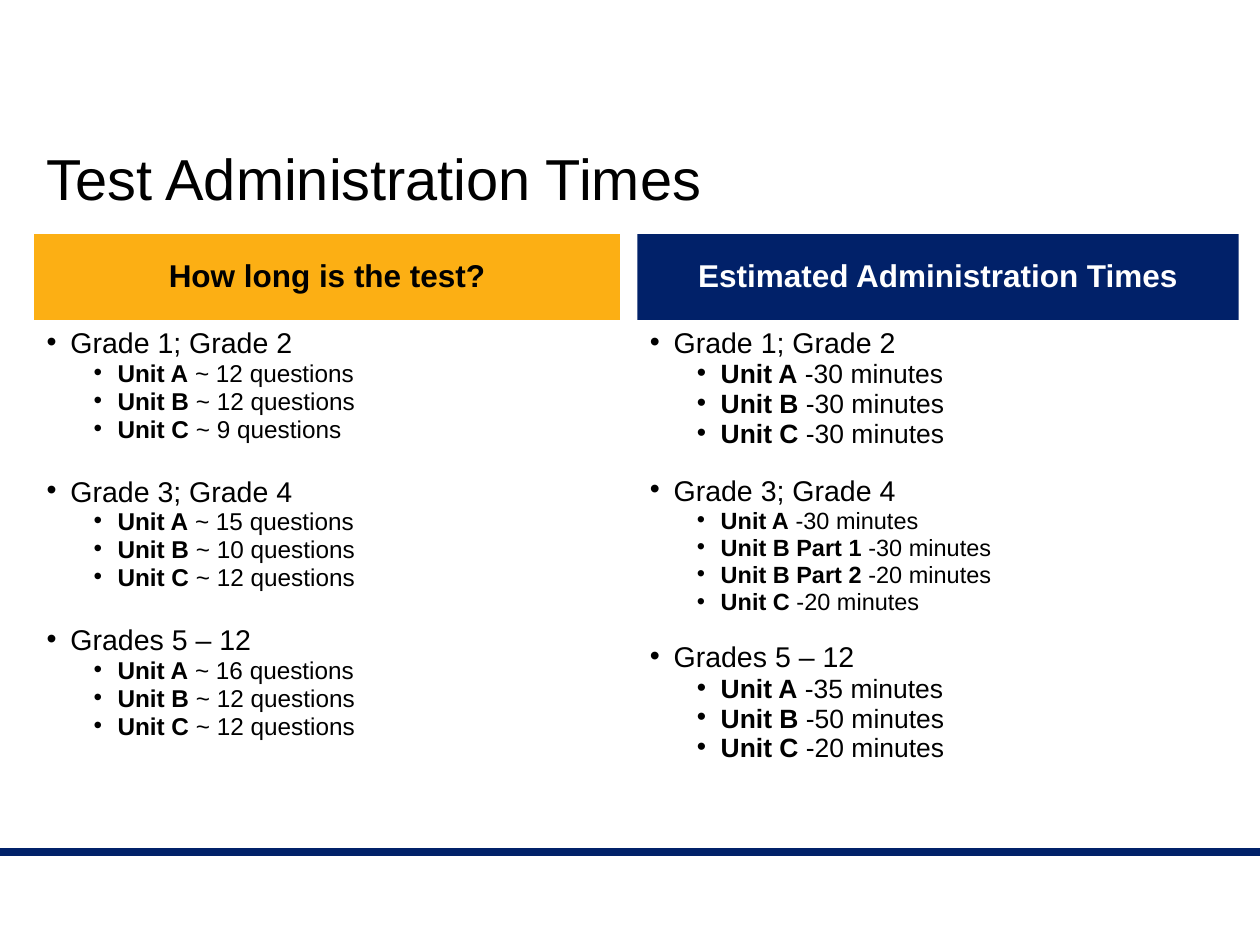
"""Build the slide on test lengths and estimated administration times."""
from lxml.etree import SubElement
from pptx import Presentation
from pptx.dml.color import RGBColor
from pptx.enum.shapes import MSO_CONNECTOR as CONN, MSO_SHAPE as SHAPE
from pptx.enum.text import MSO_ANCHOR as ANCHOR, MSO_AUTO_SIZE as AUTO, PP_ALIGN as ALIGN
from pptx.oxml.ns import qn
from pptx.util import Cm, Pt

NAVY, GOLD, BLACK, WHITE = "012169", "FCAF14", "000000", "FFFFFF"


def style(r, size, color=BLACK, bold=False):
    r.font.name, r.font.size, r.font.bold = "Arial", Pt(size), bold
    r.font.color.rgb = RGBColor.from_string(color)


def add_bullet(p, margin):
    pPr = p._p.get_or_add_pPr()
    pPr.set("marL", str(Cm(margin)))
    pPr.set("indent", str(-Cm(0.48)))
    SubElement(pPr, qn("a:buFont"), typeface="Arial")
    SubElement(pPr, qn("a:buChar"), char="•")


columns = [
    (0.69, 11.81, "How long is the test?", GOLD, BLACK, 8.46, 22.7, [
        ("Grade 1; Grade 2", 13.9, [
            ("Unit A", " ~ 12 questions"), ("Unit B", " ~ 12 questions"), ("Unit C", " ~ 9 questions")]),
        ("Grade 3; Grade 4", 13.9, [
            ("Unit A", " ~ 15 questions"), ("Unit B", " ~ 10 questions"), ("Unit C", " ~ 12 questions")]),
        ("Grades 5 – 12", 13.9, [
            ("Unit A", " ~ 16 questions"), ("Unit B", " ~ 12 questions"), ("Unit C", " ~ 12 questions")]),
    ]),
    (12.85, 12.12, "Estimated Administration Times", NAVY, WHITE, 8.76, 18.9, [
        ("Grade 1; Grade 2", 15.1, [
            ("Unit A", " -30 minutes"), ("Unit B", " -30 minutes"), ("Unit C", " -30 minutes")]),
        ("Grade 3; Grade 4", 13.4, [
            ("Unit A", " -30 minutes"), ("Unit B Part 1", " -30 minutes"),
            ("Unit B Part 2", " -20 minutes"), ("Unit C", " -20 minutes")]),
        ("Grades 5 – 12", 15.1, [
            ("Unit A", " -35 minutes"), ("Unit B", " -50 minutes"), ("Unit C", " -20 minutes")]),
    ]),
]

prs = Presentation()
prs.slide_width, prs.slide_height = Cm(25.4), Cm(19.05)
s = prs.slides.add_slide(prs.slide_layouts[5])

line = s.shapes.add_connector(CONN.STRAIGHT, 0, Cm(17.17), prs.slide_width, Cm(17.17))
line.line.color.rgb = RGBColor.from_string(NAVY)
line.line.width = Pt(4.5)
SubElement(line._element.spPr, qn("a:effectLst"))

title = s.shapes.title
title.left, title.top, title.width, title.height = Cm(0.69), Cm(2.79), Cm(22.96), Cm(1.73)
tf = title.text_frame
tf.text = "Test Administration Times"
tf.auto_size, tf.vertical_anchor = AUTO.NONE, ANCHOR.MIDDLE
p = tf.paragraphs[0]
p.alignment, p.line_spacing = ALIGN.LEFT, 0.9
style(p.runs[0], 33)

for left, width, heading, fill, color, height, gap, grades in columns:
    sp = s.shapes.add_shape(SHAPE.RECTANGLE, Cm(left), Cm(4.72), Cm(width), Cm(1.73))
    sp.shadow.inherit = False
    sp.fill.solid()
    sp.fill.fore_color.rgb = RGBColor.from_string(fill)
    sp.line.fill.background()
    tf = sp.text_frame
    tf.text = heading
    tf.word_wrap, tf.vertical_anchor = True, ANCHOR.MIDDLE
    p = tf.paragraphs[0]
    p.alignment, p.line_spacing = ALIGN.CENTER, 0.9
    style(p.runs[0], 18, color, True)

    tf = s.shapes.add_textbox(Cm(left), Cm(6.6), Cm(11.81), Cm(height)).text_frame
    tf.word_wrap = True
    for i, (grade, size, units) in enumerate(grades):
        p = tf.add_paragraph() if i else tf.paragraphs[0]
        p.text = grade
        add_bullet(p, 0.48)
        p.line_spacing, p.space_before = 0.73, Pt(gap if i else 0)
        style(p.runs[0], 16.3)
        for unit, amount in units:
            p = tf.add_paragraph()
            p.level = 1
            add_bullet(p, 1.43)
            p.line_spacing, p.space_before = 0.73, Pt(3.8)
            for text, bold in ((unit, True), (amount, False)):
                r = p.add_run()
                r.text = text
                style(r, size, bold=bold)

prs.save("out.pptx")
